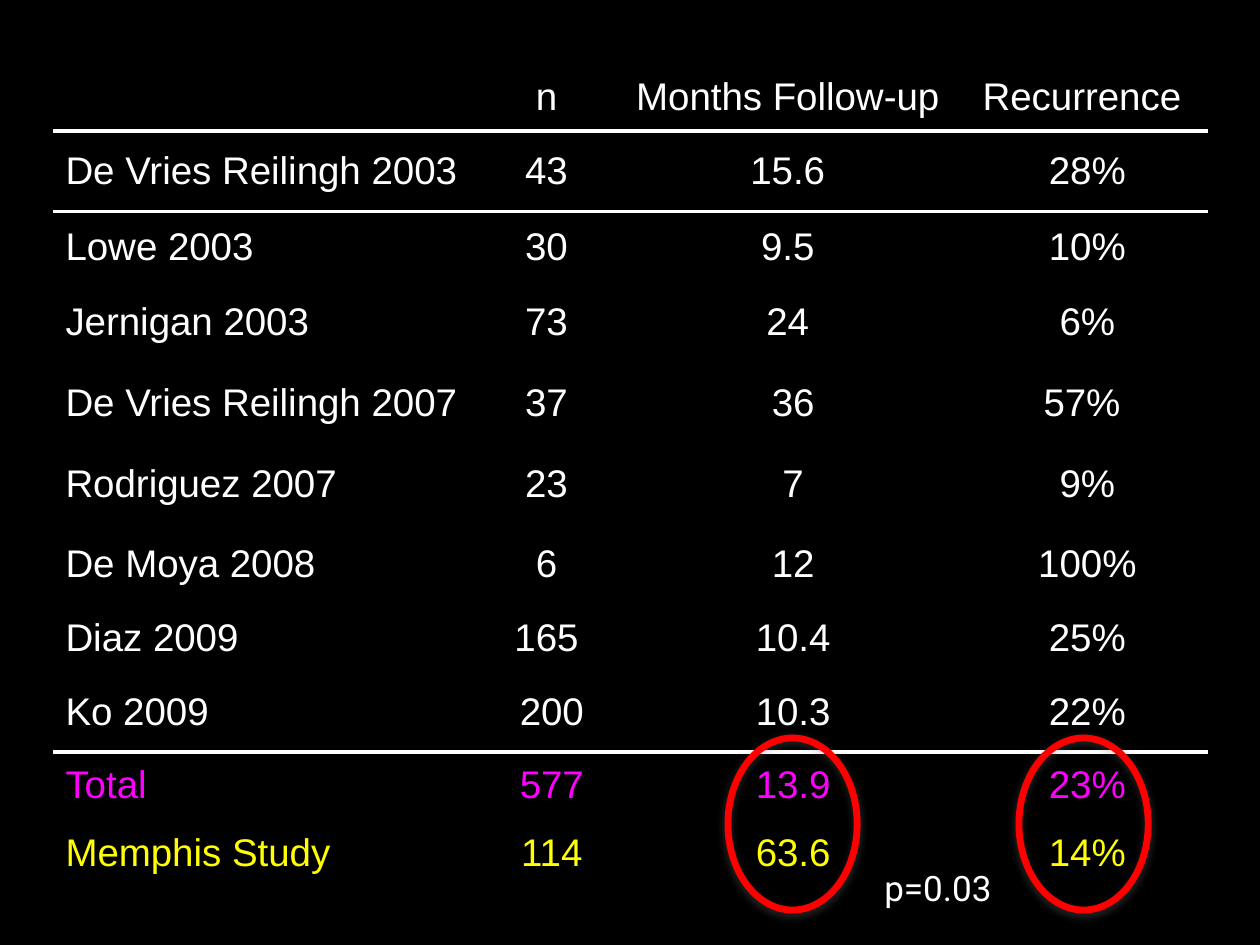
from lxml import etree
from pptx import Presentation
from pptx.dml.color import RGBColor
from pptx.enum.shapes import MSO_SHAPE
from pptx.enum.text import MSO_ANCHOR, MSO_AUTO_SIZE, PP_ALIGN
from pptx.oxml.ns import qn
from pptx.util import Emu, Inches, Pt

DONUT = MSO_SHAPE.DONUT
MIDDLE = MSO_ANCHOR.MIDDLE
GROW = MSO_AUTO_SIZE.SHAPE_TO_FIT_TEXT
LEFT, CENTER = PP_ALIGN.LEFT, PP_ALIGN.CENTER

BLACK, WHITE, RED = "000000", "FFFFFF", "FF0000"
MAGENTA, YELLOW, GRAY = "FF00FF", "FFFF00", "808080"
NO_STYLE_NO_GRID = "{2D5ABB26-0587-4C30-8999-92F81FD0307C}"

TABLE_LEFT, TABLE_TOP = 0.42, 0.5
COLUMN_WIDTHS = [3.42, 1.08, 2.75, 1.92]
ROW_HEIGHTS = [0.54, 0.64, 0.56, 0.64, 0.64, 0.64, 0.64, 0.53, 0.64, 0.52]
RING_WIDTH, RING_HEIGHT, RING_TOP = 1.08, 1.42, 5.83

STUDIES = [
    ["", "n ", "Months Follow-up ", "Recurrence "],
    ["De Vries Reilingh 2003", "43 ", "15.6 ", "28%"],
    ["Lowe 2003", "30 ", "9.5 ", "10%"],
    ["Jernigan 2003", "73 ", "24 ", "6%"],
    ["De Vries Reilingh 2007", "37 ", "36", "57% "],
    ["Rodriguez 2007", "23 ", "7", "9%"],
    ["De Moya 2008", "6 ", "12", "100%"],
    ["Diaz 2009", "165 ", "10.4", "25%"],
    ["Ko 2009", "200", "10.3", "22%"],
    ["Total", "577", "13.9", "23%"],
]
MEMPHIS = [["Memphis Study", "114", "63.6", "14%"]]
RULED_ROWS = {0: "b", 1: "t", 8: "b", 9: "t"}


def rgb(color):
    """Turn a hex string into a colour."""
    return RGBColor.from_string(color)


def add_text(paragraph, text, size, font, color):
    """Append one formatted run."""
    run = paragraph.add_run()
    run.text = text
    run.font.size = Pt(size)
    run.font.name = font
    run.font.color.rgb = rgb(color)


def rule_cell(cell, side):
    """Draw a white rule on the top or bottom side of a cell."""
    rule = etree.Element(qn(f"a:ln{side.upper()}"), w=str(Pt(2.25)))
    fill = etree.SubElement(rule, qn("a:solidFill"))
    etree.SubElement(fill, qn("a:srgbClr"), val=WHITE)
    cell._tc.get_or_add_tcPr().insert(0, rule)


def fill_cell(cell, text, align, color):
    """Write one transparent, vertically centred cell."""
    cell.fill.background()
    cell.vertical_anchor = MIDDLE
    paragraph = cell.text_frame.paragraphs[0]
    paragraph.alignment = align
    if text:
        add_text(paragraph, text, 22, "Arial", color)


def add_results(slide, top, rows, heights, last_color, ruled_rows):
    """Add a results table whose last row is highlighted."""
    frame = slide.shapes.add_table(
        len(rows), len(COLUMN_WIDTHS), Inches(TABLE_LEFT), Inches(top),
        Inches(sum(COLUMN_WIDTHS)), Inches(sum(heights)))
    table = frame.table
    table.first_row = table.horz_banding = False
    table._tbl.tblPr.find(qn("a:tableStyleId")).text = NO_STYLE_NO_GRID
    for column, width in zip(table.columns, COLUMN_WIDTHS):
        column.width = Inches(width)
    for r, (values, height) in enumerate(zip(rows, heights)):
        table.rows[r].height = Inches(height)
        color = last_color if r == len(rows) - 1 else WHITE
        for c, value in enumerate(values):
            cell = table.cell(r, c)
            fill_cell(cell, value, CENTER if c else LEFT, color)
            if r in ruled_rows:
                rule_cell(cell, ruled_rows[r])


def add_ring(shapes, left):
    """Circle a pair of results with a softly shadowed red ring."""
    ring = shapes.add_shape(DONUT, Inches(left), Inches(RING_TOP),
                            Inches(RING_WIDTH), Inches(RING_HEIGHT))
    ring.adjustments[0] = 0.05
    ring.fill.solid()
    ring.fill.fore_color.rgb = rgb(RED)
    ring.line.fill.background()
    ring.shadow.inherit = False
    effects = ring._element.spPr.find(qn("a:effectLst"))
    shadow = etree.SubElement(
        effects, qn("a:outerShdw"), blurRad=str(Pt(5)), dist=str(Pt(1.8)),
        dir="5400000", rotWithShape="0")
    tint = etree.SubElement(shadow, qn("a:srgbClr"), val=GRAY)
    etree.SubElement(tint, qn("a:alpha"), val="35000")


def add_p_value(shapes):
    """Add the significance label beside the recurrence ring."""
    label = shapes.add_textbox(Inches(6.92), Inches(6.83), Inches(1.07), Inches(0.44))
    label.text_frame.word_wrap = False
    label.text_frame.auto_size = GROW
    add_text(label.text_frame.paragraphs[0], "p=0.03", 20, "Roboto", WHITE)


def main():
    """Build the recurrence comparison slide."""
    deck = Presentation()
    deck.slide_width, deck.slide_height = Emu(Inches(10)), Emu(Inches(7.5))
    slide = deck.slides.add_slide(deck.slide_layouts[6])
    slide.background.fill.solid()
    slide.background.fill.fore_color.rgb = rgb(BLACK)

    add_results(slide, TABLE_TOP, STUDIES, ROW_HEIGHTS, MAGENTA, RULED_ROWS)
    add_results(slide, 6.51, MEMPHIS, ROW_HEIGHTS[-1:], YELLOW, {})
    add_ring(slide.shapes, 5.75)
    recurrence = slide.shapes.add_group_shape()
    add_ring(recurrence.shapes, 8.06)
    add_p_value(recurrence.shapes)
    deck.save("out.pptx")


if __name__ == "__main__":
    main()
